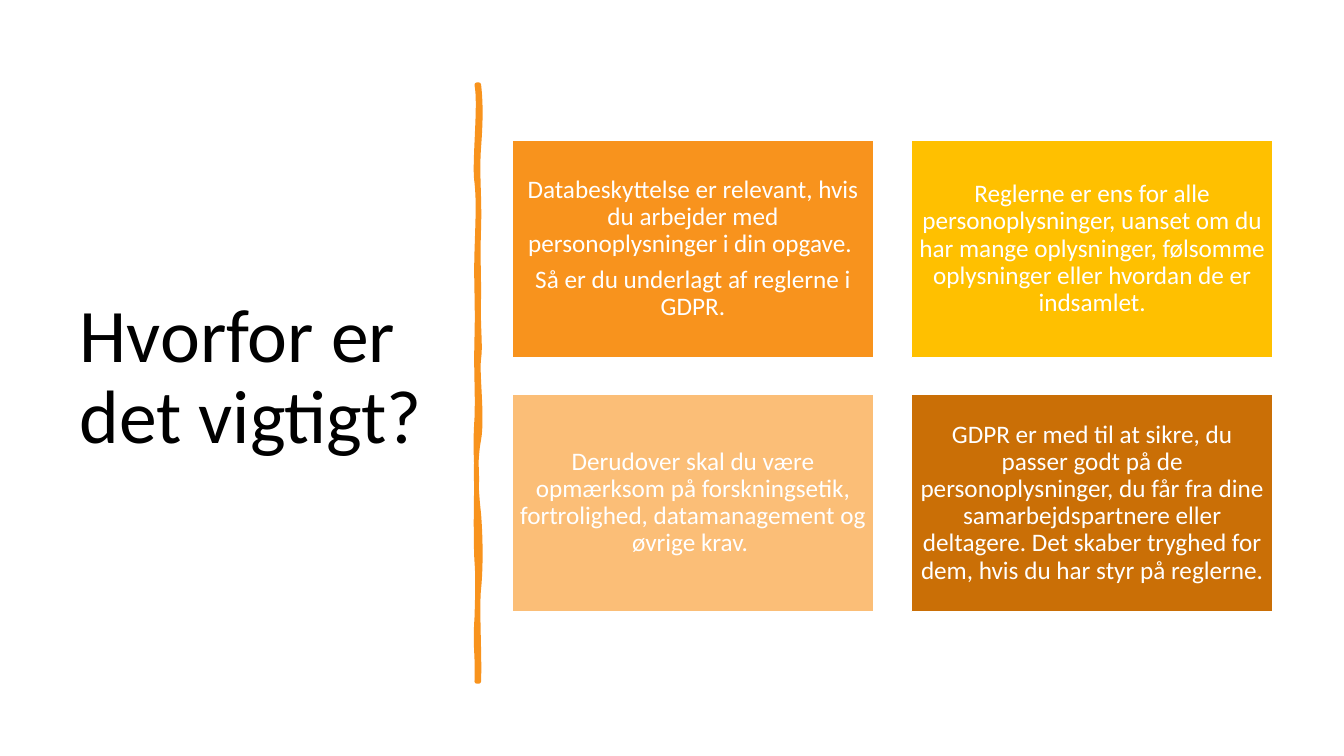
from lxml import etree
from pptx import Presentation
from pptx.dml.color import RGBColor
from pptx.enum.shapes import MSO_SHAPE
from pptx.enum.text import MSO_ANCHOR, MSO_AUTO_SIZE, PP_ALIGN
from pptx.oxml.ns import qn
from pptx.util import Inches, Pt

ORANGE = RGBColor(0xF8, 0x93, 0x1D)
YELLOW = RGBColor(0xFF, 0xC0, 0x00)
PEACH = RGBColor(0xFB, 0xBE, 0x77)
BROWN = RGBColor(0xCA, 0x6F, 0x06)
WHITE = RGBColor(0xFF, 0xFF, 0xFF)
BLACK = RGBColor(0x00, 0x00, 0x00)
FONT = "Calibri"

TITLE = "Hvorfor er det vigtigt?"
CARDS = [
    (ORANGE, ["Databeskyttelse er relevant, hvis du arbejder med personoplysninger i din opgave. ",
              "Så er du underlagt af reglerne i GDPR."]),
    (YELLOW, ["Reglerne er ens for alle personoplysninger, uanset om du har mange oplysninger, "
              "følsomme oplysninger eller hvordan de er indsamlet."]),
    (PEACH, ["Derudover skal du være opmærksom på forskningsetik, fortrolighed, "
             "datamanagement og øvrige krav. "]),
    (BROWN, ["GDPR er med til at sikre, du passer godt på de personoplysninger, du får fra dine "
             "samarbejdspartnere eller deltagere. Det skaber tryghed for dem, hvis du har styr på "
             "reglerne. "]),
]
LEFT, TOP, WIDTH, HEIGHT = 5.08, 1.39, 3.59, 2.16
STEP_X, STEP_Y = 3.96, 2.52

DIVIDER_START = (4.75, 0.84)
DIVIDER_CURVES = [
    ((4.77, 1.02), (4.77, 1.19), (4.75, 1.46)),
    ((4.73, 1.73), (4.76, 1.95), (4.75, 2.26)),
    ((4.74, 2.57), (4.75, 2.62), (4.75, 2.94)),
    ((4.74, 3.25), (4.77, 3.42), (4.75, 3.56)),
    ((4.73, 3.70), (4.79, 4.14), (4.75, 4.36)),
    ((4.71, 4.57), (4.72, 4.84), (4.75, 5.10)),
    ((4.77, 5.36), (4.77, 5.64), (4.75, 5.84)),
    ((4.73, 6.03), (4.76, 6.50), (4.75, 6.76)),
    ((4.74, 6.76), (4.73, 6.76), (4.73, 6.76)),
    ((4.74, 6.46), (4.71, 6.44), (4.73, 6.13)),
    ((4.74, 5.83), (4.74, 5.70), (4.73, 5.57)),
    ((4.72, 5.44), (4.72, 4.95), (4.73, 4.77)),
    ((4.73, 4.59), (4.71, 4.45), (4.73, 4.15)),
    ((4.74, 3.86), (4.72, 3.73), (4.73, 3.35)),
    ((4.74, 2.98), (4.72, 2.81), (4.73, 2.50)),
    ((4.74, 2.18), (4.75, 2.00), (4.73, 1.81)),
    ((4.70, 1.63), (4.77, 1.04), (4.73, 0.84)),
]


def add_title(s):
    sp = s.shapes.title
    sp.left, sp.top, sp.width, sp.height = map(Inches, (0.69, 0.7, 3.74, 6.11))
    tf = sp.text_frame
    tf.text = TITLE
    tf.word_wrap = True
    tf.auto_size = MSO_AUTO_SIZE.NONE
    tf.vertical_anchor = MSO_ANCHOR.MIDDLE
    p = tf.paragraphs[0]
    p.alignment = PP_ALIGN.LEFT
    p.line_spacing = 0.9
    p.font.size, p.font.name = Pt(54), FONT
    p.font.color.rgb = BLACK


def add_divider(s):
    builder = s.shapes.build_freeform(*map(Inches, DIVIDER_START))
    ends = [tuple(map(Inches, curve[-1])) for curve in DIVIDER_CURVES]
    builder.add_line_segments(ends, close=True)
    sp = builder.convert_to_shape()
    for segment, curve in zip(list(sp.element.iter(qn("a:lnTo"))), DIVIDER_CURVES):
        bezier = etree.Element(qn("a:cubicBezTo"))
        for x, y in curve:
            etree.SubElement(bezier, qn("a:pt"), x=str(Inches(x) - sp.left),
                             y=str(Inches(y) - sp.top))
        segment.getparent().replace(segment, bezier)
    sp.shadow.inherit = False
    sp.fill.solid()
    sp.fill.fore_color.rgb = ORANGE
    sp.line.color.rgb = ORANGE
    sp.line.width = Pt(3.25)


def add_card(s, index, color, paragraphs):
    row, col = divmod(index, 2)
    sp = s.shapes.add_shape(MSO_SHAPE.RECTANGLE, Inches(LEFT + col * STEP_X),
                            Inches(TOP + row * STEP_Y), Inches(WIDTH), Inches(HEIGHT))
    sp.shadow.inherit = False
    sp.fill.solid()
    sp.fill.fore_color.rgb = color
    sp.line.color.rgb = WHITE
    sp.line.width = Pt(1)
    tf = sp.text_frame
    tf.word_wrap = True
    tf.vertical_anchor = MSO_ANCHOR.MIDDLE
    tf.margin_left = tf.margin_right = tf.margin_top = tf.margin_bottom = Inches(0.07)
    tf.text = "\n".join(paragraphs)
    for p in tf.paragraphs:
        p.alignment = PP_ALIGN.CENTER
        p.line_spacing = 0.9
        p.space_after = Pt(6.3)
        p.font.size, p.font.name = Pt(18), FONT
        p.font.color.rgb = WHITE


def main():
    prs = Presentation()
    prs.slide_width, prs.slide_height = Inches(40 / 3), Inches(7.5)
    s = prs.slides.add_slide(prs.slide_layouts[5])
    add_title(s)
    add_divider(s)
    for index, (color, paragraphs) in enumerate(CARDS):
        add_card(s, index, color, paragraphs)
    prs.save("out.pptx")


if __name__ == "__main__":
    main()
